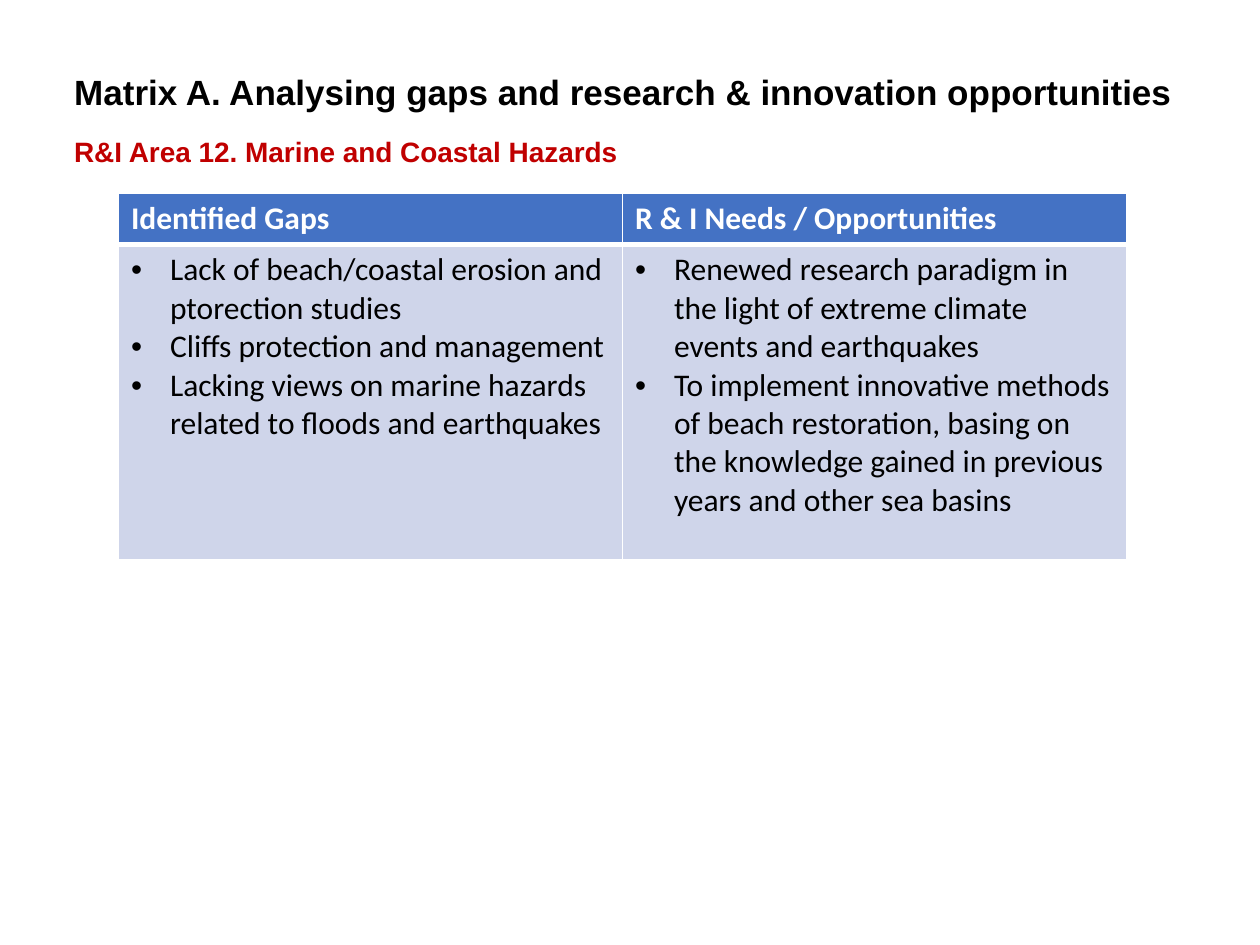
from dataclasses import dataclass

from lxml.etree import SubElement
from pptx import Presentation
from pptx.dml.color import RGBColor
from pptx.enum.text import MSO_ANCHOR
from pptx.oxml.ns import qn
from pptx.util import Inches, Pt


@dataclass(frozen=True)
class Theme:
    heading_font: str = "Arial"
    table_font: str = "Calibri"
    title_size: int = 20
    subtitle_size: int = 16
    table_size: int = 18
    black: str = "000000"
    white: str = "FFFFFF"
    red: str = "C00000"
    header_fill: str = "4472C4"
    body_fill: str = "CFD5EA"


class SlideBuilder:
    def __init__(self, slide, theme):
        self.s = slide
        self.theme = theme

    def run(self, p, text, color, **font_format):
        r = p.add_run()
        r.text = text
        for name, value in font_format.items():
            setattr(r.font, name, value)
        r.font.color.rgb = RGBColor.from_string(color)

    def heading(self, text, box, size, color, anchor):
        sp = self.s.shapes.add_textbox(*map(Inches, box))
        tf = sp.text_frame
        for name, value in {"word_wrap": True, "vertical_anchor": anchor}.items():
            setattr(tf, name, value)
        self.run(tf.paragraphs[0], text, color, name=self.theme.heading_font,
                 size=Pt(size), bold=True)

    def bullet(self, p, indent=0.31):
        pPr = p._p.get_or_add_pPr()
        pPr.set("marL", str(Inches(indent)))
        pPr.set("indent", str(Inches(-indent)))
        SubElement(pPr, qn("a:buFont"), typeface="Arial")
        SubElement(pPr, qn("a:buChar"), char="•")

    def borders(self, cell, **widths):
        tcPr = cell._tc.get_or_add_tcPr()
        for side in "LRTB":
            ln = SubElement(tcPr, qn(f"a:ln{side}"), w=str(Pt(widths.get(side, 1))))
            fill = SubElement(ln, qn("a:solidFill"))
            SubElement(fill, qn("a:srgbClr"), val=self.theme.white)

    def cell(self, cell, lines, is_header):
        t = self.theme
        # Thick rule between the header and the body
        self.borders(cell, **{"B" if is_header else "T": 3})
        cell.fill.solid()
        cell.fill.fore_color.rgb = RGBColor.from_string(
            t.header_fill if is_header else t.body_fill)
        tf = cell.text_frame
        for i, line in enumerate(lines):
            p = tf.add_paragraph() if i else tf.paragraphs[0]
            if not is_header:
                self.bullet(p)
            self.run(p, line, t.white if is_header else t.black,
                     name=t.table_font, size=Pt(t.table_size), bold=is_header)

    def matrix(self, columns, box, header_height):
        left, top, width, height = map(Inches, box)
        table = self.s.shapes.add_table(2, len(columns), left, top, width, height).table
        table.rows[0].height = Inches(header_height)
        table.rows[1].height = height - Inches(header_height)
        for col, (header, items) in enumerate(columns.items()):
            self.cell(table.cell(0, col), [header], True)
            self.cell(table.cell(1, col), items, False)


GAPS_AND_NEEDS = {
    "Identified Gaps": [
        "Lack of beach/coastal erosion and ptorection studies",
        "Cliffs protection and management",
        "Lacking views on marine hazards related to floods and earthquakes",
    ],
    "R & I Needs / Opportunities": [
        "Renewed research paradigm in the light of extreme climate events and earthquakes",
        "To implement innovative methods of beach restoration, basing on the "
        "knowledge gained in previous years and other sea basins",
    ],
}


def main():
    prs = Presentation()
    prs.slide_width, prs.slide_height = Inches(10), Inches(7.5)
    theme = Theme()
    builder = SlideBuilder(prs.slides.add_slide(prs.slide_layouts[6]), theme)

    # Title and research area
    builder.heading("Matrix A. Analysing gaps and research & innovation opportunities",
                    (0.49, 0.43, 8.98, 0.59), theme.title_size, theme.black,
                    MSO_ANCHOR.MIDDLE)
    builder.heading("R&I Area 12. Marine and Coastal Hazards",
                    (0.49, 1.02, 6.4, 0.37), theme.subtitle_size, theme.red,
                    MSO_ANCHOR.TOP)

    # Gaps and opportunities table
    builder.matrix(GAPS_AND_NEEDS, (0.94, 1.53, 8, 2.91), header_height=0.41)

    prs.save("out.pptx")


if __name__ == "__main__":
    main()
